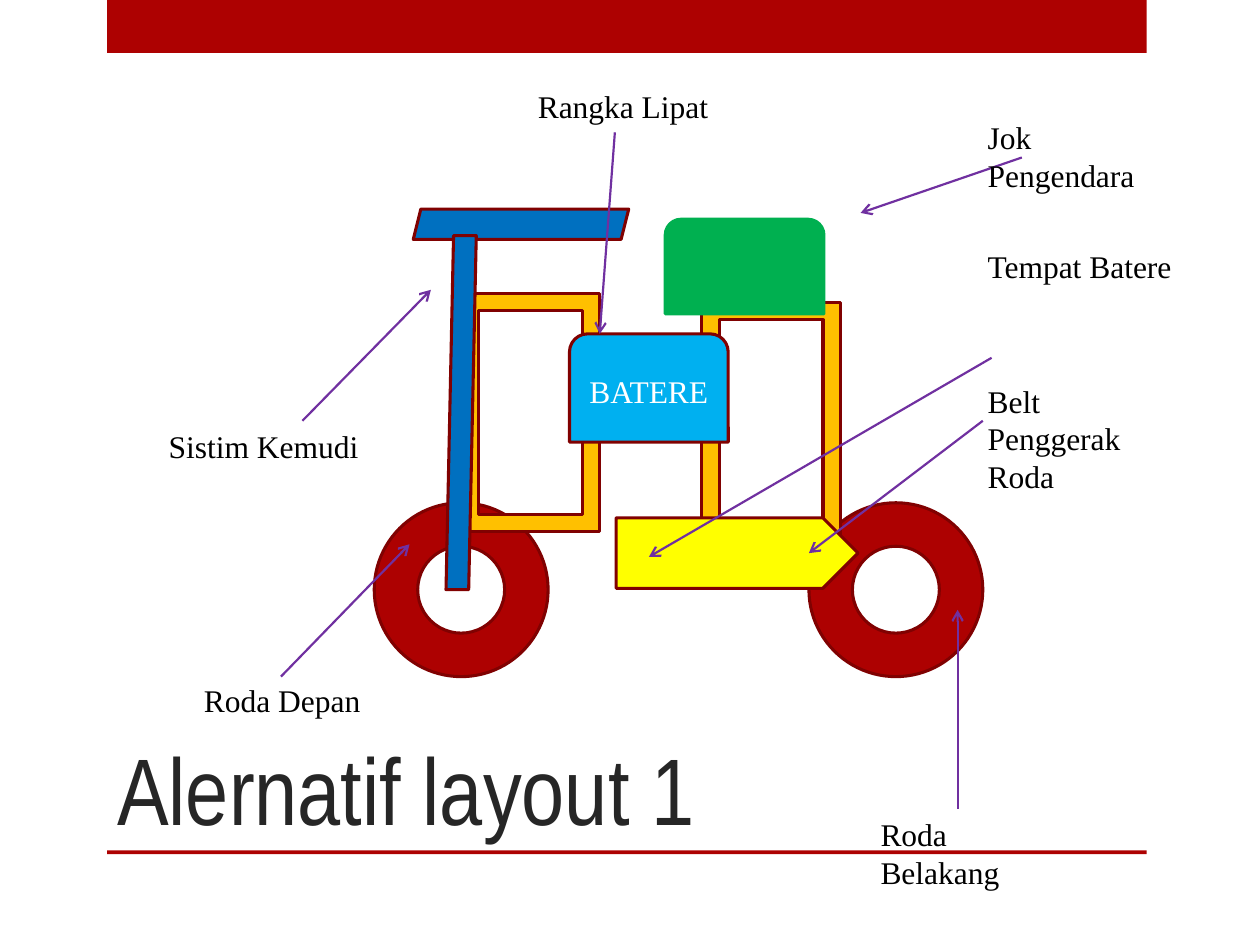
import pptx
import pptx.util
import pptx.dml.color
import pptx.enum.shapes
import pptx.enum.text
import pptx.oxml
import pptx.oxml.ns
from pptx.util import Inches

COLORS = {
    "red": "AD0101", "outline": "800101", "title": "262626", "black": "000000",
    "white": "FFFFFF", "frame": "FFC000", "seat": "00B050", "steering": "0070C0",
    "battery": "00B0F0", "belt": "FFFF00", "arrow": "7030A0",
}
SHAPE = pptx.enum.shapes.MSO_SHAPE
ALIGN = pptx.enum.text.PP_ALIGN
ANCHOR = pptx.enum.text.MSO_ANCHOR
FIT = pptx.enum.text.MSO_AUTO_SIZE


class Deck:
    body_font = "Times New Roman"
    title_font = "Arial Narrow"

    def __init__(self, prs):
        self.prs = prs
        self.slide = prs.slides.add_slide(prs.slide_layouts[5])

    def color(self, name):
        return pptx.dml.color.RGBColor.from_string(COLORS[name])

    def set_text(self, tf, text, size, font, color, align):
        tf.word_wrap = True
        tf.text = text
        p = tf.paragraphs[0]
        p.alignment = align
        r = p.runs[0]
        r.font.size = pptx.util.Pt(size)
        r.font.name = font
        r.font.color.rgb = self.color(color)

    def title(self, text, x, y, w, h):
        sp = self.slide.shapes.title
        sp.left, sp.top, sp.width, sp.height = map(Inches, (x, y, w, h))
        tf = sp.text_frame
        self.set_text(tf, text, 54, self.title_font, "title", ALIGN.LEFT)
        tf.auto_size = FIT.NONE
        tf.vertical_anchor = ANCHOR.BOTTOM

    def shape(self, kind, x, y, w, h, fill, line="outline", text=None):
        sp = self.slide.shapes.add_shape(kind, *map(Inches, (x, y, w, h)))
        sp.shadow.inherit = False
        sp.fill.solid()
        sp.fill.fore_color.rgb = self.color(fill)
        if line:
            sp.line.color.rgb = self.color(line)
            sp.line.width = pptx.util.Pt(1.75)
        else:
            sp.line.fill.background()
        if text:
            self.set_text(sp.text_frame, text, 18, self.body_font, "white",
                          ALIGN.CENTER)
            sp.text_frame.vertical_anchor = ANCHOR.MIDDLE

    def label(self, text, x, y, h):
        sp = self.slide.shapes.add_textbox(*map(Inches, (x, y, 1.73, h)))
        self.set_text(sp.text_frame, text, 18, self.body_font, "black", ALIGN.LEFT)
        sp.text_frame.auto_size = FIT.SHAPE_TO_FIT_TEXT

    def arrow(self, start, end):
        sp = self.slide.shapes.add_connector(
            pptx.enum.shapes.MSO_CONNECTOR.STRAIGHT, *map(Inches, start + end))
        sp.line.color.rgb = self.color("arrow")
        sp.line.width = pptx.util.Pt(1.25)
        ns = pptx.oxml.ns.nsdecls("a")
        ln = sp.element.spPr.find(pptx.oxml.ns.qn("a:ln"))
        ln.append(pptx.oxml.parse_xml(f'<a:tailEnd {ns} type="arrow"/>'))
        ln.addnext(pptx.oxml.parse_xml(f"<a:effectLst {ns}/>"))


def main():
    prs = pptx.Presentation()
    prs.slide_width, prs.slide_height = Inches(10), Inches(7.5)
    deck = Deck(prs)

    for y, h in ((0, 0.42), (6.75, 0.03)):
        deck.shape(SHAPE.RECTANGLE, 0.85, y, 8.25, h, "red", None)
    deck.title("Alernatif layout 1", 0.83, 5, 7.42, 1.75)

    for x in (2.97, 6.42):
        deck.shape(SHAPE.DONUT, x, 3.99, 1.38, 1.38, "red")
    for x, y in ((3.66, 2.33), (5.57, 2.4)):
        deck.shape(SHAPE.FRAME, x, y, 1.1, 1.89, "frame")
    deck.shape(SHAPE.ROUND_2_SAME_RECTANGLE, 5.28, 1.74, 1.26, 0.75, "seat", "seat")
    deck.shape(SHAPE.PARALLELOGRAM, 3.28, 1.66, 1.71, 0.24, "steering")
    deck.shape(SHAPE.PARALLELOGRAM, 3.54, 1.87, 0.24, 2.81, "steering")
    deck.shape(SHAPE.ROUND_2_SAME_RECTANGLE, 4.52, 2.65, 1.26, 0.86, "battery",
               text="BATERE")
    deck.shape(SHAPE.PENTAGON, 4.89, 4.11, 1.92, 0.56, "belt")

    callouts = [
        ("Roda Depan", 1.52, 5.36, 0.4, (2.23, 5.37), (3.25, 4.32)),
        ("Roda Belakang", 6.89, 6.42, 0.71, (7.6, 6.42), (7.6, 4.84)),
        ("Belt Penggerak Roda", 7.74, 2.98, 1.01, (7.8, 3.34), (6.42, 4.39)),
        ("Tempat Batere", 7.74, 1.91, 0.4, (7.87, 2.84), (5.15, 4.42)),
        ("Jok Pengendara", 7.74, 0.89, 0.71, (8.11, 1.25), (6.83, 1.69)),
        ("Sistim Kemudi", 1.24, 3.34, 0.4, (2.4, 3.34), (3.42, 2.3)),
        ("Rangka Lipat", 4.17, 0.64, 0.4, (4.88, 1.05), (4.76, 2.65)),
    ]
    for text, x, y, h, start, end in callouts:
        deck.arrow(start, end)
        deck.label(text, x, y, h)

    prs.save("out.pptx")


if __name__ == "__main__":
    main()
